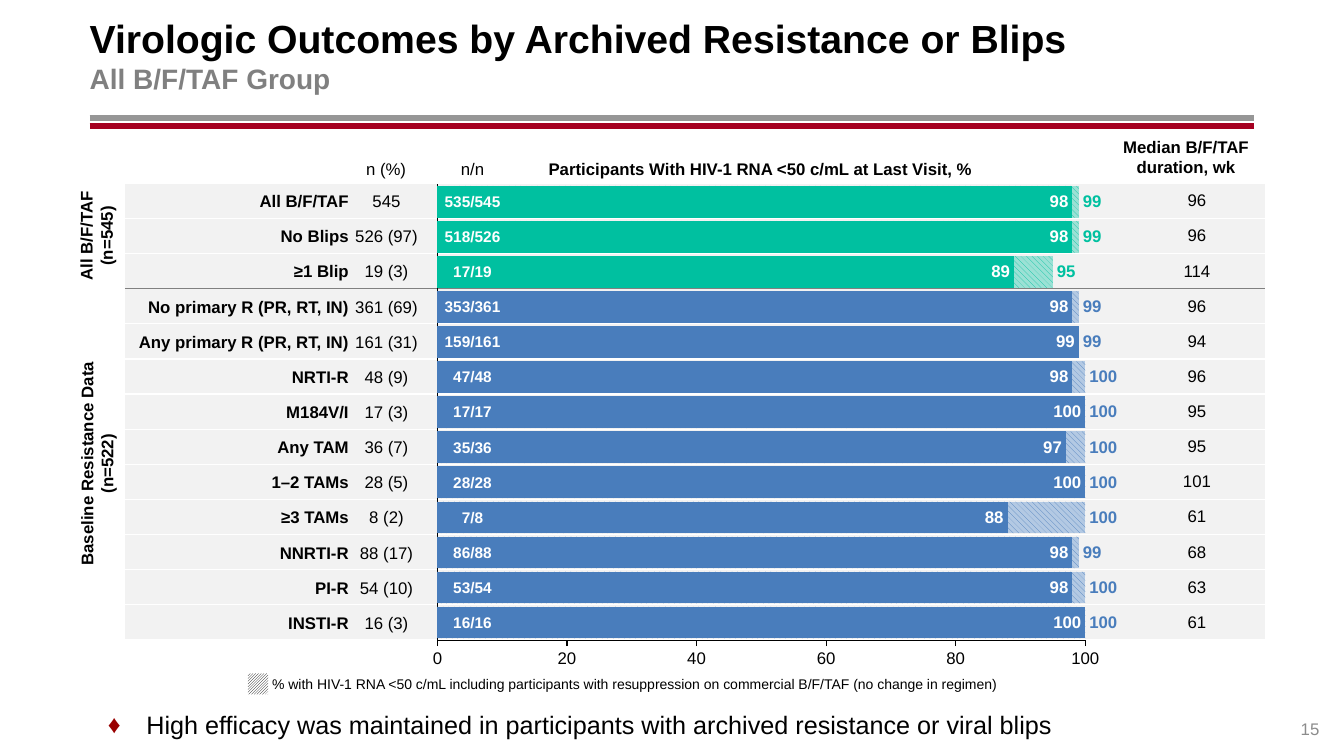
from lxml import etree
from pptx import Presentation
from pptx import util as u
from pptx.chart.data import CategoryChartData
from pptx.dml.color import RGBColor
from pptx.enum import chart as ch, dml, shapes, text
from pptx.oxml import parse_xml
from pptx.oxml.ns import nsdecls, qn

Cm, Pt = u.Cm, u.Pt
FONT = "Arial"
BLACK, WHITE, GREY, BAND = "000000", "FFFFFF", "808080", "F2F2F2"
BLUE, PALE_BLUE, GREEN, PALE_GREEN = "497DBC", "B3C9E3", "00C0A0", "9BE1D5"
LEFT, RIGHT, CENTER = text.PP_ALIGN.LEFT, text.PP_ALIGN.RIGHT, text.PP_ALIGN.CENTER
TOP, MIDDLE, BOTTOM = text.MSO_ANCHOR.TOP, text.MSO_ANCHOR.MIDDLE, text.MSO_ANCHOR.BOTTOM

# group, n (%), n/n, % at last visit, % including resuppression, median weeks
ROWS = [
    ("All B/F/TAF", "545", "535/545", 98, 99, 96),
    ("No Blips", "526 (97)", "518/526", 98, 99, 96),
    ("≥1 Blip", "19 (3)", "17/19", 89, 95, 114),
    ("No primary R (PR, RT, IN)", "361 (69)", "353/361", 98, 99, 96),
    ("Any primary R (PR, RT, IN)", "161 (31)", "159/161", 99, 99, 94),
    ("NRTI-R", "48 (9)", "47/48", 98, 100, 96),
    ("M184V/I", "17 (3)", "17/17", 100, 100, 95),
    ("Any TAM", "36 (7)", "35/36", 97, 100, 95),
    ("1–2 TAMs", "28 (5)", "28/28", 100, 100, 101),
    ("≥3 TAMs", "8 (2)", "7/8", 88, 100, 61),
    ("NNRTI-R", "88 (17)", "86/88", 98, 99, 68),
    ("PI-R", "54 (10)", "53/54", 98, 100, 63),
    ("INSTI-R", "16 (3)", "16/16", 100, 100, 61),
]
N_ALL = 3  # rows in the "All B/F/TAF" block
GRID_TOP, GRID_H = 4.62, 11.51
ROW_H = GRID_H / len(ROWS)


def rgb(hex_):
    return RGBColor.from_string(hex_)


def style(font, size, color=BLACK, bold=False):
    font.name, font.size, font.bold = FONT, Pt(size), bold
    font.color.rgb = rgb(color)


def add_text(s, box, lines, size=12, color=BLACK, bold=False, align=CENTER,
             anchor=MIDDLE, rot=0):
    sp = s.shapes.add_textbox(*map(Cm, box))
    sp.rotation = rot
    tf = sp.text_frame
    tf.word_wrap = True
    tf.vertical_anchor = anchor
    tf.margin_left = tf.margin_right = tf.margin_top = tf.margin_bottom = 0
    tf.text = lines
    for p in tf.paragraphs:
        p.alignment = align
        style(p.font, size, color, bold)
    return tf


def add_bullet(p, char, color):
    pPr = p._p.get_or_add_pPr()
    pPr.set("marL", str(Cm(0.97)))
    pPr.set("indent", str(-Cm(0.97)))
    for xml in (f'<a:buClr {nsdecls("a")}><a:srgbClr val="{color}"/></a:buClr>',
                f'<a:buFont {nsdecls("a")} typeface="{FONT}"/>',
                f'<a:buChar {nsdecls("a")} char="{char}"/>'):
        pPr.find(qn("a:defRPr")).addprevious(parse_xml(xml))


def add_rule(s, y, color):
    ln = s.shapes.add_connector(shapes.MSO_CONNECTOR.STRAIGHT,
                                Cm(2.26), Cm(y), Cm(31.6), Cm(y))
    ln.line.color.rgb, ln.line.width = rgb(color), Pt(4.25)
    etree.SubElement(ln._element.spPr, qn("a:effectLst"))


def hatch(fill, pattern, fore, back):
    fill.patterned()
    fill.pattern = pattern
    fill.fore_color.rgb, fill.back_color.rgb = rgb(fore), rgb(back)


def set_borders(cell, top, bottom):
    tcPr = cell._tc.get_or_add_tcPr()
    for i, (side, color) in enumerate(zip("LRTB", (None, None, top, bottom))):
        paint = (f'<a:solidFill><a:srgbClr val="{color}"/></a:solidFill>'
                 if color else "<a:noFill/>")
        tcPr.insert(i, parse_xml(
            f'<a:ln{side} {nsdecls("a")} w="12700">{paint}</a:ln{side}>'))


def add_duration_table(s):
    tbl = s.shapes.add_table(len(ROWS), 2, Cm(3.15), Cm(GRID_TOP),
                             Cm(28.73), Cm(GRID_H)).table
    tbl.first_row = tbl.horz_banding = False
    tbl.columns[0].width, tbl.columns[1].width = Cm(25.3), Cm(3.43)
    for i, row in enumerate(ROWS):
        tbl.rows[i].height = Cm(ROW_H)
        for cell, value in zip(tbl.rows[i].cells, ("", str(row[-1]))):
            cell.margin_top = cell.margin_bottom = 0
            cell.vertical_anchor = MIDDLE
            cell.fill.solid()
            cell.fill.fore_color.rgb = rgb(BAND)
            set_borders(cell, GREY if i == N_ALL else WHITE,
                        GREY if i == N_ALL - 1 else WHITE)
            cell.text = value
            p = cell.text_frame.paragraphs[0]
            p.alignment = CENTER
            style(p.font, 12)


def label_series(labels, color, position):
    style(labels.font, 12, color, True)
    labels.position = position


def add_outcome_chart(s):
    bars = ROWS[::-1]  # the category axis runs upwards
    data = CategoryChartData()
    data.categories = [str(i + 1) for i in range(len(bars))]
    data.add_series("Series 1", [row[4] for row in bars])
    data.add_series("Series 2", [row[3] for row in bars])
    chart = s.shapes.add_chart(ch.XL_CHART_TYPE.BAR_CLUSTERED, Cm(10.26), Cm(4.47),
                               Cm(18.64), Cm(12.42), data).chart
    chart.has_title = chart.has_legend = False
    style(chart.font, 10)
    plot = chart.plots[0]
    plot.gap_width, plot.overlap, plot.vary_by_categories = 11, 100, False

    # Bars: hatched total behind, solid value in front
    total, solid = plot.series
    wide = dml.MSO_PATTERN.WIDE_DOWNWARD_DIAGONAL
    out_end, in_end = ch.XL_LABEL_POSITION.OUTSIDE_END, ch.XL_LABEL_POSITION.INSIDE_END
    hatch(total.format.fill, wide, BLUE, PALE_BLUE)
    solid.format.fill.solid()
    solid.format.fill.fore_color.rgb = rgb(BLUE)
    for series, color, position in ((total, BLUE, out_end), (solid, WHITE, in_end)):
        series.invert_if_negative = False
        series.data_labels.show_value = True
        label_series(series.data_labels, color, position)
    for i in range(len(bars) - N_ALL, len(bars)):
        hatch(total.points[i].format.fill, wide, GREEN, PALE_GREEN)
        label_series(total.points[i].data_label, GREEN, out_end)
        fill = solid.points[i].format.fill
        fill.solid()
        fill.fore_color.rgb = rgb(GREEN)

    # Axes
    cat, val = chart.category_axis, chart.value_axis
    for axis in (cat, val):
        axis.has_major_gridlines = False
        axis.format.line.color.rgb, axis.format.line.width = rgb(BLACK), Pt(0.75)
        style(axis.tick_labels.font, 12)
    cat.tick_label_position = ch.XL_TICK_LABEL_POSITION.NONE
    cat.major_tick_mark = ch.XL_TICK_MARK.NONE
    val.major_tick_mark = ch.XL_TICK_MARK.OUTSIDE
    val.minimum_scale, val.maximum_scale, val.major_unit = 0, 100, 20

    # Fixed plot area and clear background
    area = chart._chartSpace.chart.plotArea
    for old in area.findall(qn("c:layout")):
        area.remove(old)
    places = "".join(f'<c:{k} val="{v}"/>' for k, v in (
        ("layoutTarget", "inner"), ("xMode", "edge"), ("yMode", "edge"),
        ("x", 0.041), ("y", 0.014), ("w", 0.876), ("h", 0.925)))
    area.insert(0, parse_xml(f'<c:layout {nsdecls("c")}><c:manualLayout>{places}'
                             '</c:manualLayout></c:layout>'))
    clear = (f'<c:spPr {nsdecls("c", "a")}><a:noFill/><a:ln><a:noFill/></a:ln></c:spPr>')
    area.append(parse_xml(clear))
    chart._chartSpace.chart.addnext(parse_xml(clear))


def add_row_texts(s):
    for i, (group, n, ratio, *_) in enumerate(ROWS):
        y = GRID_TOP + i * ROW_H
        add_text(s, (3.4, y, 5.39, ROW_H), group, bold=True, align=RIGHT)
        add_text(s, (8.56, y, 2.36, ROW_H), n)
        add_text(s, (11.11, y, 1.6, ROW_H), ratio, 11, WHITE, True)


def add_legend(s):
    sp = s.shapes.add_shape(shapes.MSO_SHAPE.RECTANGLE,
                            Cm(6.25), Cm(16.97), Cm(0.51), Cm(0.53))
    sp.shadow.inherit = False
    sp.line.fill.background()
    hatch(sp.fill, dml.MSO_PATTERN.LIGHT_UPWARD_DIAGONAL, BLACK, WHITE)
    add_text(s, (6.86, 16.79, 20.9, 0.89),
             "% with HIV-1 RNA <50 c/mL including participants with resuppression "
             "on commercial B/F/TAF (no change in regimen)", 10, align=LEFT)


def main():
    prs = Presentation()
    prs.slide_width, prs.slide_height = Cm(33.87), Cm(19.05)
    s = prs.slides.add_slide(prs.slide_layouts[6])

    # Title and rules
    add_rule(s, 2.97, "969696")
    add_rule(s, 3.18, "A50021")
    tf = add_text(s, (2.26, 0.28, 29.34, 2.18),
                  "Virologic Outcomes by Archived Resistance or Blips\nAll B/F/TAF Group",
                  28, bold=True, align=LEFT)
    style(tf.paragraphs[1].font, 20, GREY, True)

    # Table, chart and row texts
    add_duration_table(s)
    add_outcome_chart(s)
    add_row_texts(s)

    # Column and block headings
    add_text(s, (8.89, 4.01, 1.68, 0.51), "n (%)")
    add_text(s, (11.07, 4.01, 1.68, 0.51), "n/n")
    add_text(s, (11.28, 4.01, 15.77, 0.51),
             "Participants With HIV-1 RNA <50 c/mL at Last Visit, %", bold=True)
    add_text(s, (27.58, 3.38, 4.62, 1.14), "Median B/F/TAF duration, wk", bold=True)
    add_text(s, (0.68, 5.31, 3.23, 1.27), "All B/F/TAF\n(n=545)",
             bold=True, anchor=BOTTOM, rot=270)
    add_text(s, (-0.94, 11.05, 6.5, 1.27), "Baseline Resistance Data\n(n=522)",
             bold=True, anchor=BOTTOM, rot=270)

    # Legend, conclusion and page number
    add_legend(s)
    tf = add_text(s, (2.72, 17.88, 25.45, 0.84),
                  "High efficacy was maintained in participants with archived "
                  "resistance or viral blips", 18, align=LEFT, anchor=TOP)
    add_bullet(tf.paragraphs[0], "♦", "990000")
    add_text(s, (31.6, 17.6, 1.65, 1.02), "15", color="8C8C8C", align=RIGHT, anchor=BOTTOM)
    prs.save("out.pptx")


if __name__ == "__main__":
    main()
